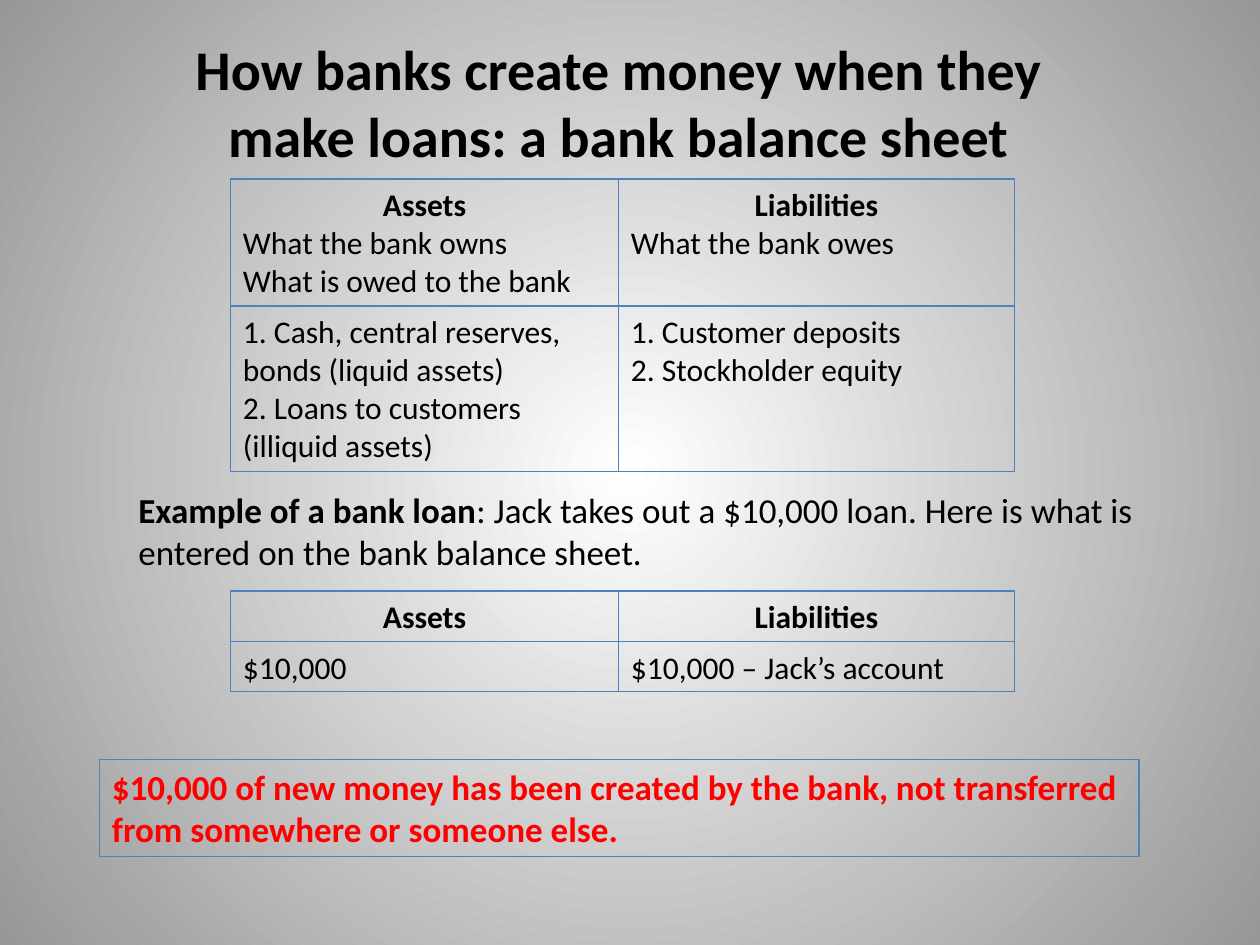
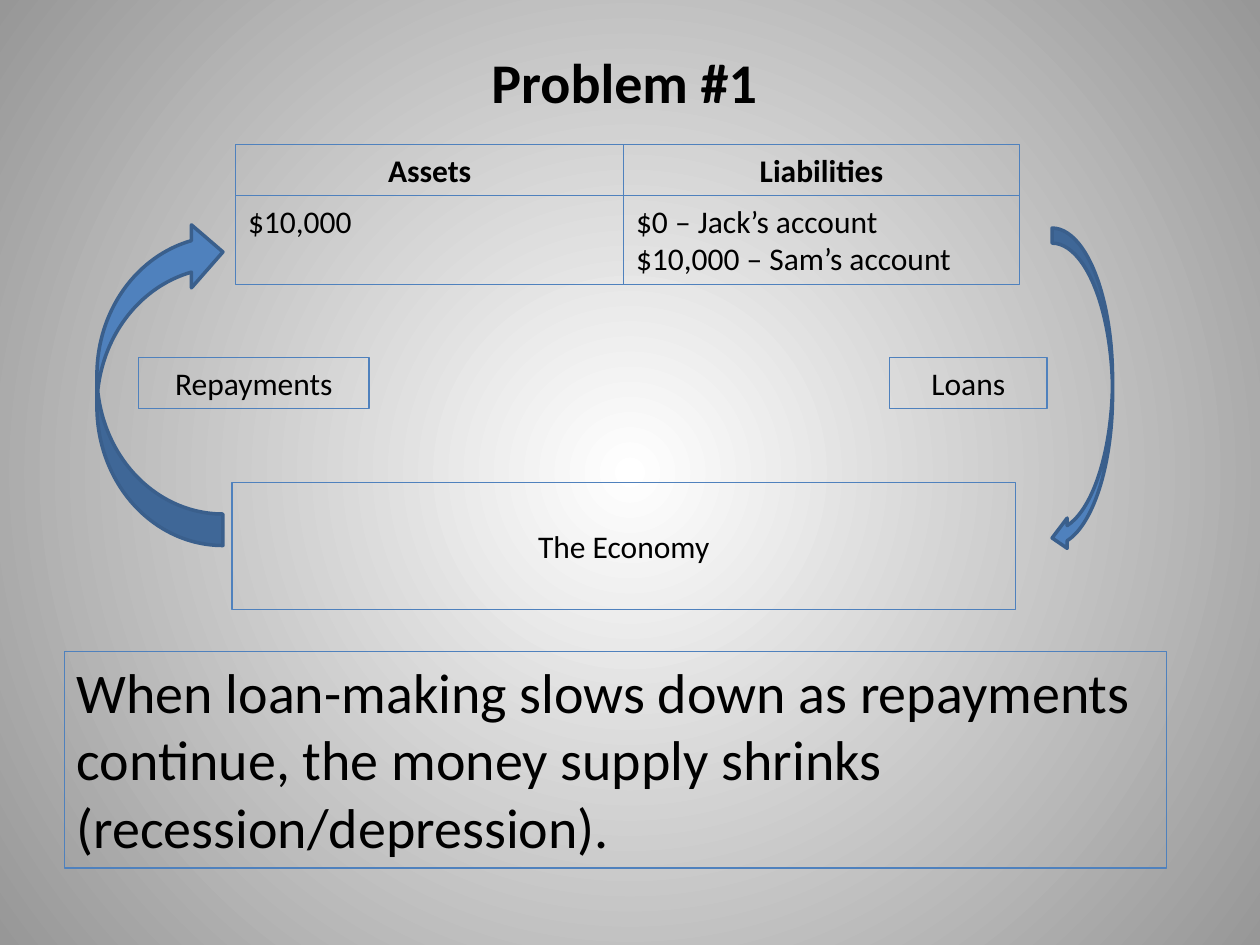
from lxml import etree
from pptx import Presentation
from pptx import util as u
from pptx.dml.color import RGBColor
from pptx.enum import shapes, text
from pptx.oxml import ns

LEFT, CENTER = text.PP_ALIGN.LEFT, text.PP_ALIGN.CENTER
BLACK, RED = RGBColor(0, 0, 0), RGBColor(255, 0, 0)

THEME = {
    "font": "Calibri",
    "background": [RGBColor.from_string("FFFFFF"), RGBColor.from_string("979797")],
    "accent": RGBColor.from_string("4F81BD"),
    "arrow_line": RGBColor.from_string("3A5F8C"),
    "styles": {
        "title": {"size": 32, "bold": True, "color": BLACK, "align": CENTER},
        "heading": {"size": 18, "bold": True, "color": BLACK, "align": CENTER},
        "body": {"size": 18, "bold": False, "color": BLACK, "align": LEFT},
        "label": {"size": 18, "bold": False, "color": BLACK, "align": CENTER},
        "example": {"size": 20, "bold": False, "color": BLACK, "align": LEFT},
        "example_lead": {"size": 20, "bold": True, "color": BLACK, "align": LEFT},
        "result": {"size": 20, "bold": True, "color": RED, "align": LEFT},
        "conclusion": {"size": 32, "bold": False, "color": BLACK, "align": LEFT},
    },
}


def write(shape, paragraphs, anchor=text.MSO_ANCHOR.TOP):
    """Fill a shape with paragraphs, each a list of (words, style name) runs."""
    frame = shape.text_frame
    settings = {"word_wrap": True, "auto_size": text.MSO_AUTO_SIZE.NONE,
                "vertical_anchor": anchor}
    for name, value in settings.items():
        setattr(frame, name, value)
    for index, runs in enumerate(paragraphs):
        paragraph = frame.paragraphs[0] if index == 0 else frame.add_paragraph()
        paragraph.alignment = THEME["styles"][runs[0][1]]["align"]
        for words, style_name in runs:
            style = THEME["styles"][style_name]
            run = paragraph.add_run()
            run.text = words
            font = {"name": THEME["font"], "size": u.Pt(style["size"]),
                    "bold": style["bold"]}
            for name, value in font.items():
                setattr(run.font, name, value)
            run.font.color.rgb = style["color"]


def add_outlined_box(slide, place, paragraphs, anchor=text.MSO_ANCHOR.TOP):
    box = slide.shapes.add_shape(shapes.MSO_SHAPE.RECTANGLE, *map(u.Inches, place))
    box.shadow.inherit = False
    box.fill.background()
    box.line.color.rgb = THEME["accent"]
    box.line.width = u.Pt(0.75)
    write(box, paragraphs, anchor)


presentation = Presentation()
presentation.slide_width = u.Inches(10)
presentation.slide_height = u.Inches(7.5)

# Radial background, shared through the master
master = presentation.slide_master
background = master.background.fill
background.gradient()
for stop, color in zip(background.gradient_stops, THEME["background"]):
    stop.color.rgb = color
gradient = next(master.element.iter(ns.qn("a:gradFill")))
gradient.remove(gradient.find(ns.qn("a:lin")))
radial = etree.SubElement(gradient, ns.qn("a:path"), path="circle")
etree.SubElement(radial, ns.qn("a:fillToRect"),
                 {side: "50000" for side in "ltrb"})

# Titles
titles = [
    ("How banks create money when they make loans: a bank balance sheet",
     (1.12, 0.22, 7.58, 1.18)),
    ("Problem #1", (2.58, 0.33, 4.75, 0.64)),
]
slides = []
for words, place in titles:
    slide = presentation.slides.add_slide(presentation.slide_layouts[5])
    title = slide.shapes.title
    title.left, title.top, title.width, title.height = map(u.Inches, place)
    write(title, [[(words, "title")]])
    slides.append(slide)
loan_slide, problem_slide = slides

# Balance sheets: the first line of the top row is the column heading
column_widths = [3.08, 3.14]
balance_sheets = [
    (loan_slide, 1.83, 1.42, [1.01, 1.31], [
        [["Assets", "What the bank owns", "What is owed to the bank"],
         ["Liabilities", "What the bank owes"]],
        [["1. Cash, central reserves, bonds (liquid assets)",
          "2. Loans to customers", "(illiquid assets)"],
         ["1. Customer deposits", "2. Stockholder equity"]],
    ]),
    (loan_slide, 1.83, 4.69, [0.4, 0.4], [
        [["Assets"], ["Liabilities"]],
        [["$10,000"], ["$10,000 – Jack’s account"]],
    ]),
    (problem_slide, 1.87, 1.15, [0.4, 0.71], [
        [["Assets"], ["Liabilities"]],
        [["$10,000"], ["$0 – Jack’s account", "$10,000 – Sam’s account"]],
    ]),
]
for slide, sheet_left, top, row_heights, rows in balance_sheets:
    for row, (height, cells) in enumerate(zip(row_heights, rows)):
        left = sheet_left
        for width, lines in zip(column_widths, cells):
            paragraphs = [[(line, "heading" if row == index == 0 else "body")]
                          for index, line in enumerate(lines)]
            add_outlined_box(slide, (left, top, width, height), paragraphs)
            left += width
        top += height

# Slide 1: example and result
example = loan_slide.shapes.add_textbox(*map(u.Inches, (1, 3.83, 8.25, 0.77)))
write(example, [[
    ("Example of a bank loan", "example_lead"),
    (": Jack takes out a $10,000 loan. Here is what is entered on the bank "
     "balance sheet.", "example"),
]])
add_outlined_box(loan_slide, (0.79, 6.03, 8.25, 0.77), [[
    ("$10,000 of new money has been created by the bank, not transferred from "
     "somewhere or someone else.", "result")]])

# Slide 2: the loop between the bank and the economy
labels = [
    ("The Economy", (1.84, 3.83, 6.22, 1.01)),
    ("Loans", (7.06, 2.84, 1.25, 0.4)),
    ("Repayments", (1.1, 2.84, 1.83, 0.4)),
]
for words, place in labels:
    add_outlined_box(problem_slide, place, [[(words, "label")]],
                     text.MSO_ANCHOR.MIDDLE)

arrows = [
    ((8.35, 1.81, 0.48, 2.58), {}),
    ((0.77, 1.75, 1, 2.58), {"flipH": "1", "flipV": "1"}),
]
for place, flips in arrows:
    arrow = problem_slide.shapes.add_shape(
        shapes.MSO_SHAPE.CURVED_LEFT_ARROW, *map(u.Inches, place))
    arrow.shadow.inherit = False
    arrow.fill.solid()
    arrow.fill.fore_color.rgb = THEME["accent"]
    arrow.line.color.rgb = THEME["arrow_line"]
    arrow.line.width = u.Pt(2)
    for name, value in flips.items():
        arrow.element.spPr.find(ns.qn("a:xfrm")).set(name, value)

add_outlined_box(problem_slide, (0.51, 5.17, 8.75, 1.72), [[
    ("When loan-making slows down as repayments continue, the money supply "
     "shrinks (recession/depression).", "conclusion")]])

presentation.save("out.pptx")
